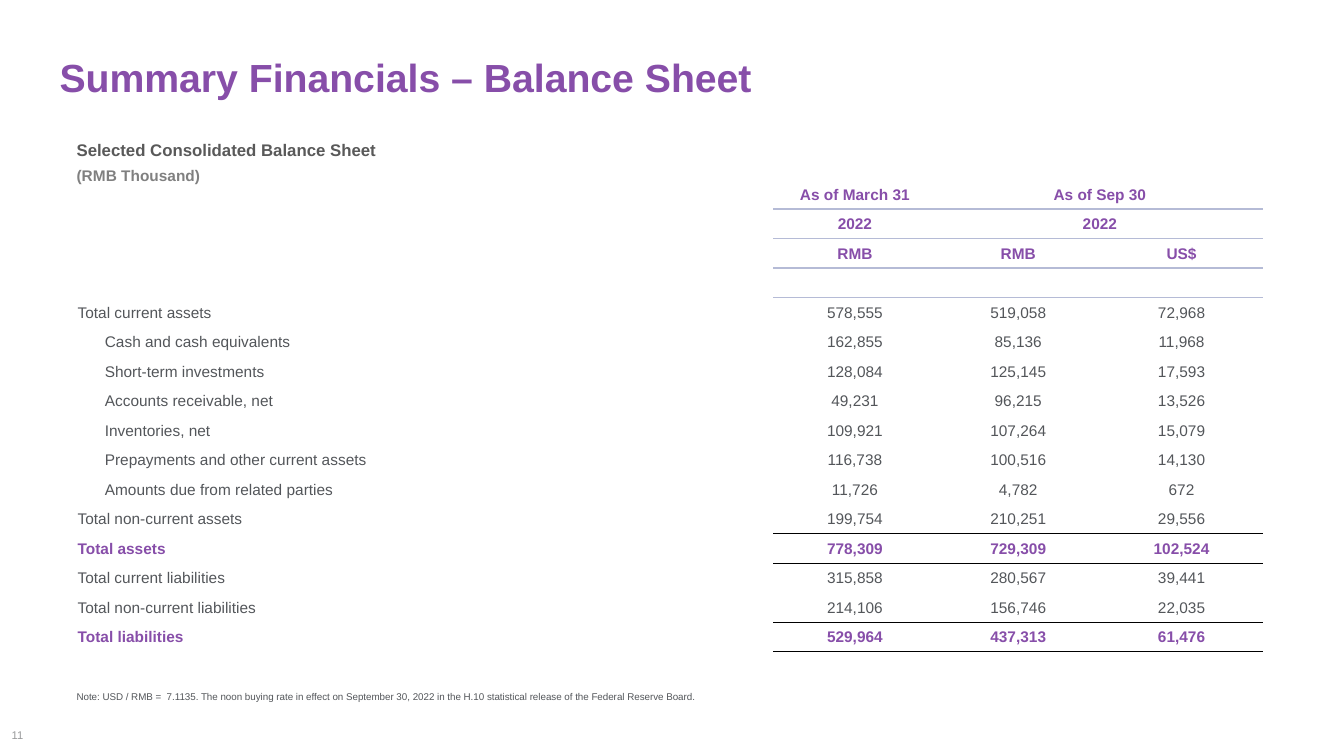
from lxml import etree
from pptx import Presentation
from pptx.dml.color import RGBColor
from pptx.enum.text import MSO_ANCHOR, PP_ALIGN
from pptx.oxml.ns import qn
from pptx.util import Inches, Pt

LEFT, CENTER, RIGHT = PP_ALIGN.LEFT, PP_ALIGN.CENTER, PP_ALIGN.RIGHT
TOP, MIDDLE = MSO_ANCHOR.TOP, MSO_ANCHOR.MIDDLE

# Content
COLORS = {"purple": "874EA9", "text": "53565A", "heading": "595959", "unit": "808080",
          "number": "999A9B", "header_rule": "B5BBD6", "total_rule": "000000"}
FONT = "Arial"
TITLE = "Summary Financials – Balance Sheet"
NOTE = ("Note: USD / RMB =  7.1135. The noon buying rate in effect on September 30, 2022 "
        "in the H.10 statistical release of the Federal Reserve Board.")
# text, (left, top, width, height), size, colour, bold, alignment, anchor, inset
LABELS = [
    ("Selected Consolidated Balance Sheet", (0.76, 1.39, 3.4, 0.2), 12, "heading", True, LEFT, TOP, 0),
    ("(RMB Thousand)", (0.76, 1.65, 1.38, 0.19), 11, "unit", True, LEFT, TOP, 0),
    ("11", (0, 7.21, 0.33, 0.16), 8, "number", False, RIGHT, MIDDLE, 0.1),
    (NOTE, (0.76, 6.85, 9.17, 0.12), 7, "text", False, LEFT, TOP, 0),
]
HEADERS = [
    ("", "As of March 31", "As of Sep 30", ""),
    ("", "2022", "2022", ""),
    ("", "RMB", "RMB", "US$"),
    ("", "", "", ""),
]
ITEMS = [
    ("Total current assets", "578,555", "519,058", "72,968"),
    ("Cash and cash equivalents", "162,855", "85,136", "11,968"),
    ("Short-term investments", "128,084", "125,145", "17,593"),
    ("Accounts receivable, net", "49,231", "96,215", "13,526"),
    ("Inventories, net", "109,921", "107,264", "15,079"),
    ("Prepayments and other current assets", "116,738", "100,516", "14,130"),
    ("Amounts due from related parties", "11,726", "4,782", "672"),
    ("Total non-current assets", "199,754", "210,251", "29,556"),
    ("Total assets", "778,309", "729,309", "102,524"),
    ("Total current liabilities", "315,858", "280,567", "39,441"),
    ("Total non-current liabilities", "214,106", "156,746", "22,035"),
    ("Total liabilities", "529,964", "437,313", "61,476"),
]
GRAND_TOTALS = ("Total assets", "Total liabilities")
ROWS = HEADERS + ITEMS

# Table grid
TABLE_LEFT, TABLE_TOP, TABLE_HEIGHT = 0.76, 1.78, 4.69
COL_WIDTHS = (6.91, 1.62, 1.62, 1.62)
MERGED_ROWS = (0, 1)
RULES_BELOW = {0: "header_rule", 1: "header_rule", 2: "header_rule",
               11: "total_rule", 14: "total_rule", 15: "total_rule"}
NO_STYLE = "{2D5ABB26-0587-4C30-8999-92F81FD0307C}"


def write(tf, text, size, color, bold, align):
    tf.text = text
    p = tf.paragraphs[0]
    p.alignment = align
    for r in p.runs:
        r.font.name, r.font.size, r.font.bold = FONT, Pt(size), bold
        r.font.color.rgb = RGBColor.from_string(COLORS[color])
    if not text:  # keeps an empty cell from growing its row
        etree.SubElement(p._p, qn("a:endParaRPr"), sz=str(size * 100))


def frame(tf, anchor, inset):
    tf.word_wrap = True
    tf.vertical_anchor = anchor
    tf.margin_left = tf.margin_right = Inches(inset)
    tf.margin_top = tf.margin_bottom = Inches(inset / 2)


def place(sp, box):
    sp.left, sp.top, sp.width, sp.height = (Inches(v) for v in box)


def add_border(cell, side, color):
    ln = etree.Element(qn("a:" + side), w=str(Pt(1)))
    fill = etree.SubElement(ln, qn("a:solidFill"))
    etree.SubElement(fill, qn("a:srgbClr"), val=COLORS[color])
    cell._tc.get_or_add_tcPr().insert(0, ln)


def add_table(slide):
    gf = slide.shapes.add_table(len(ROWS), len(COL_WIDTHS), Inches(TABLE_LEFT), Inches(TABLE_TOP),
                                Inches(sum(COL_WIDTHS)), Inches(TABLE_HEIGHT))
    table = gf.table
    table.first_row = table.horz_banding = False
    table._tbl.tblPr.find(qn("a:tableStyleId")).text = NO_STYLE
    for column, width in zip(table.columns, COL_WIDTHS):
        column.width = Inches(width)
    for i, values in enumerate(ROWS):
        table.rows[i].height = Inches(TABLE_HEIGHT / len(ROWS))
        strong = i < len(HEADERS) or values[0] in GRAND_TOTALS
        indented = values[0] and not values[0].startswith("Total")
        for j, text in enumerate(values):
            cell = table.cell(i, j)
            cell.fill.background()
            cell.vertical_anchor = MIDDLE
            cell.margin_left = Inches(0.28 if indented and j == 0 else 0.01)
            cell.margin_right = cell.margin_top = Inches(0.01)
            cell.margin_bottom = 0
            write(cell.text_frame, text, 11, "purple" if strong else "text", strong,
                  CENTER if j else LEFT)
            # Rules run under the figures only
            if j and i in RULES_BELOW:
                add_border(cell, "lnB", RULES_BELOW[i])
            if j and i - 1 in RULES_BELOW:
                add_border(cell, "lnT", RULES_BELOW[i - 1])
    for i in MERGED_ROWS:
        table.cell(i, 2).merge(table.cell(i, 3))


def main():
    prs = Presentation()
    prs.slide_width, prs.slide_height = Inches(13.33), Inches(7.5)
    slide = prs.slides.add_slide(prs.slide_layouts[5])

    # Title
    title = slide.shapes.title
    place(title, (0.59, 0.53, 12.32, 0.47))
    frame(title.text_frame, TOP, 0)
    write(title.text_frame, TITLE, 28, "purple", True, LEFT)

    # Balance sheet
    add_table(slide)

    # Headings, page number and note
    for text, box, size, color, bold, align, anchor, inset in LABELS:
        sp = slide.shapes.add_textbox(0, 0, 0, 0)
        place(sp, box)
        frame(sp.text_frame, anchor, inset)
        write(sp.text_frame, text, size, color, bold, align)

    prs.save("out.pptx")


if __name__ == "__main__":
    main()
